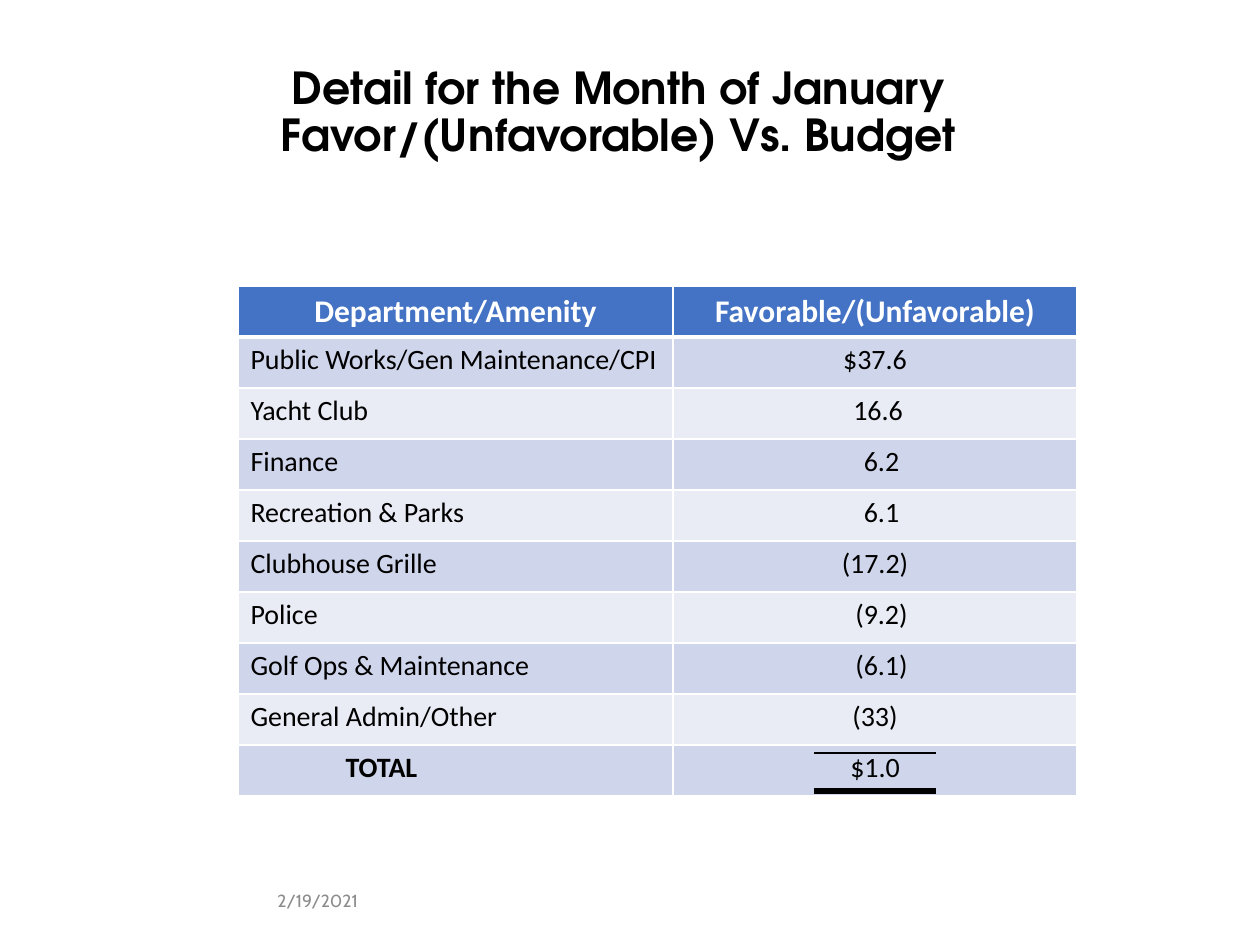
from lxml import etree
from pptx import Presentation
from pptx import util as u
from pptx.dml.color import RGBColor
from pptx.enum import shapes, text
from pptx.oxml.ns import qn

PX = 914400 / 126
COLORS = {
    "black": "000000", "white": "FFFFFF", "grey": "8C8C8C",
    "header": "4472C4", "band_dark": "CFD5EA", "band_light": "E9EBF5",
}
LEFT, CENTER, RIGHT = text.PP_ALIGN.LEFT, text.PP_ALIGN.CENTER, text.PP_ALIGN.RIGHT

HEADINGS = ("Department/Amenity", "Favorable/(Unfavorable)")
# Department, amount, indent in px that lines up the digits
ROWS = [
    ("Public Works/Gen Maintenance/CPI", "$37.6", 0),
    ("Yacht Club", "16.6", 6),
    ("Finance", "6.2", 13),
    ("Recreation & Parks", "6.1", 13),
    ("Clubhouse Grille", "(17.2)", 0),
    ("Police", "(9.2)", 13),
    ("Golf Ops & Maintenance", "(6.1)", 13),
    ("General Admin/Other", "(33)", 0),
]
TOTAL = ("TOTAL", "$1.0")
TOTAL_INDENT = 95


def px(length):
    return u.Emu(round(length * PX))


def rgb(name):
    return RGBColor.from_string(COLORS[name])


class SlideBuilder:
    def __init__(self, slide):
        self.slide = slide

    def add_words(self, paragraph, words, font, size, color, align=LEFT, bold=False, indent=0):
        paragraph.alignment = align
        if indent:
            properties = paragraph._p.get_or_add_pPr()
            properties.set("marL", str(px(indent)))
            properties.set("indent", "0")
        run = paragraph.add_run()
        run.text = words
        run.font.name = font
        run.font.size = u.Pt(size)
        run.font.bold = bold
        run.font.color.rgb = rgb(color)

    def text_box(self, left, top, width, height, lines, font, size, color, align,
                 bold=False, spacing=1.0):
        box = self.slide.shapes.add_textbox(px(left), px(top), px(width), px(height))
        frame = box.text_frame
        frame.word_wrap = True
        frame.vertical_anchor = text.MSO_ANCHOR.MIDDLE
        for number, line in enumerate(lines):
            paragraph = frame.add_paragraph() if number else frame.paragraphs[0]
            paragraph.line_spacing = spacing
            self.add_words(paragraph, line, font, size, color, align, bold)

    def table(self, left, top, column_widths, row_height, row_count):
        frame = self.slide.shapes.add_table(
            row_count, len(column_widths), px(left), px(top),
            px(sum(column_widths)), px(row_height * row_count))
        table = frame.table
        for column, width in zip(table.columns, column_widths):
            column.width = px(width)
        for row in table.rows:
            row.height = px(row_height)
        return table

    def cell(self, cell, words, fill, size=16, color="black", top=1, bottom=1, **style):
        properties = cell._tc.get_or_add_tcPr()
        for side, points in (("L", 1), ("R", 1), ("T", top), ("B", bottom)):
            border = etree.SubElement(properties, qn("a:ln" + side), w=str(u.Pt(points)))
            solid = etree.SubElement(border, qn("a:solidFill"))
            etree.SubElement(solid, qn("a:srgbClr"), val=COLORS["white"])
        cell.fill.solid()
        cell.fill.fore_color.rgb = rgb(fill)
        self.add_words(cell.text_frame.paragraphs[0], words, "Calibri", size, color, **style)

    def rule(self, left, right, y, points):
        line = self.slide.shapes.add_connector(
            shapes.MSO_CONNECTOR.STRAIGHT, px(left), px(y), px(right), px(y))
        line.line.color.rgb = rgb("black")
        line.line.width = u.Pt(points)
        etree.SubElement(line._element.spPr, qn("a:effectLst"))


def main():
    presentation = Presentation()
    presentation.slide_width, presentation.slide_height = px(1260), px(945)
    builder = SlideBuilder(presentation.slides.add_slide(presentation.slide_layouts[6]))

    # Title and date
    builder.text_box(102, 29, 1033, 169,
                     ["Detail for the Month of January", "Favor/(Unfavorable) Vs. Budget"],
                     "TeX Gyre Adventor", 25.2, "black", CENTER, bold=True, spacing=0.9)
    builder.text_box(87, 876, 283, 50, ["2/19/2021"], "Cabin", 10, "grey", RIGHT)

    # Table header
    table = builder.table(238, 286, (435, 404), 51, len(ROWS) + 2)
    for column, heading in enumerate(HEADINGS):
        builder.cell(table.cell(0, column), heading, "header", 18, "white",
                     bottom=3, align=CENTER, bold=True)

    # Departments and total, in alternating bands
    entries = [(*row, 0) for row in ROWS] + [(*TOTAL, 0, TOTAL_INDENT)]
    for number, (name, amount, amount_indent, name_indent) in enumerate(entries, 1):
        fill = "band_dark" if number % 2 else "band_light"
        top = 3 if number == 1 else 1
        builder.cell(table.cell(number, 0), name, fill, top=top,
                     bold=name == TOTAL[0], indent=name_indent)
        builder.cell(table.cell(number, 1), amount, fill, top=top,
                     align=CENTER, indent=amount_indent)

    # Rules around the total
    builder.rule(814, 936, 753, 1.25)
    builder.rule(814, 936, 791, 3)

    presentation.save("out.pptx")


if __name__ == "__main__":
    main()
